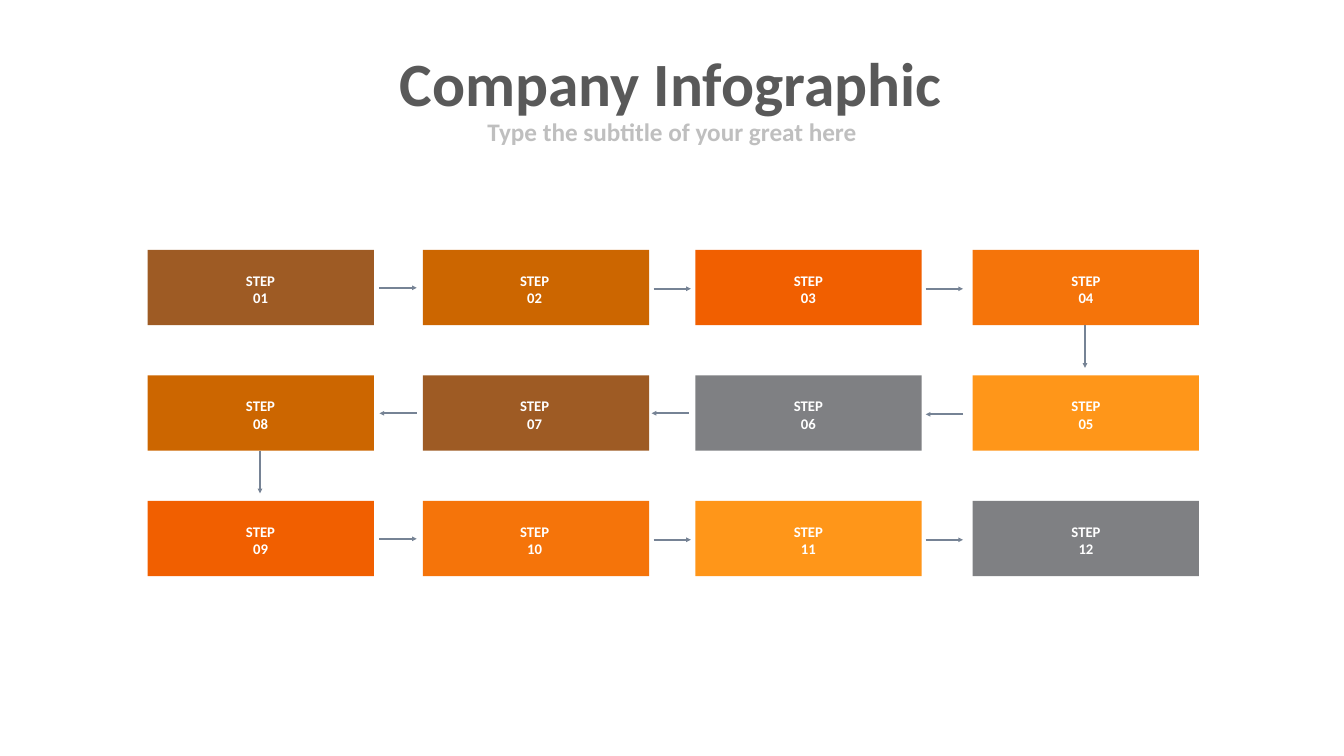
from pptx import Presentation
from pptx.dml.color import RGBColor
from pptx.enum.shapes import MSO_CONNECTOR as Link, MSO_SHAPE as Shape
from pptx.enum.text import MSO_ANCHOR as Anchor, MSO_AUTO_SIZE as Fit, PP_ALIGN as Align
from pptx.oxml.ns import qn
from pptx.util import Pt
from lxml.etree import SubElement

PX = 9144  # EMU per px, 100 px to the inch

BROWN = RGBColor(0x9E, 0x5B, 0x24)
OCHRE = RGBColor(0xCC, 0x66, 0x00)
RED_ORANGE = RGBColor(0xF1, 0x5F, 0x00)
ORANGE = RGBColor(0xF5, 0x74, 0x0A)
AMBER = RGBColor(0xFF, 0x96, 0x19)
GREY = RGBColor(0x7F, 0x80, 0x83)
SLATE = RGBColor(0x76, 0x83, 0x95)
DARK = RGBColor(0x59, 0x59, 0x59)
PALE = RGBColor(0xBF, 0xBF, 0xBF)
WHITE = RGBColor(0xFF, 0xFF, 0xFF)

STEP_COLORS = [BROWN, OCHRE, RED_ORANGE, ORANGE, AMBER, GREY]
HEADING = {"alignment": Align.CENTER, "line_spacing": 0.9, "space_before": Pt(0)}
SUBHEADING = {**HEADING, "space_before": Pt(10)}
LABEL = {"alignment": Align.CENTER}

# Grid of steps
BOX_LEFTS = [293, 839, 1380, 1930]
LABEL_LEFTS = [461, 1005, 1548, 2099]
BOX_WIDTH, BOX_HEIGHT = 449, 149
FIRST_TOP, ROW_PITCH, ROWS = 496, 249, 3
GAP_ARROWS = [(753, 75), (1297, 77), (1837, 77)]  # left end, drop below row top
BACK_ARROWS = [(753, 75), (1293, 75), (1837, 77)]
ARROW_WIDTH, ARROW_DROP = 74, 85
TURNS = [2153, 516]  # x of the down arrows after rows one and two


class Canvas:
    """Holds the text style and the slide being drawn."""

    font_name = "Calibri"

    def __init__(self, slide):
        self.slide = slide

    def put_text(self, frame, text, size, color, para_format):
        para = frame.paragraphs[0]
        para.text = text
        for name, value in para_format.items():
            setattr(para, name, value)
        font_format = {"name": self.font_name, "size": Pt(size), "bold": True}
        for span in para.runs:
            for name, value in font_format.items():
                setattr(span.font, name, value)
            span.font.color.rgb = color

    def heading(self, index, text, place, size, color, para_format):
        holder = self.slide.placeholders[index]
        for name, value in zip(("left", "top", "width", "height"), place):
            setattr(holder, name, value * PX)
        frame = holder.text_frame
        settings = {"word_wrap": True, "auto_size": Fit.NONE, "vertical_anchor": Anchor.TOP}
        for name, value in settings.items():
            setattr(frame, name, value)
        self.put_text(frame, text, size, color, para_format)

    def block(self, left, top, width, height, color):
        box = self.slide.shapes.add_shape(
            Shape.RECTANGLE, left * PX, top * PX, width * PX, height * PX)
        box.shadow.inherit = False
        box.fill.solid()
        box.fill.fore_color.rgb = color
        box.line.fill.background()

    def label(self, left, top, width, height, text):
        box = self.slide.shapes.add_textbox(left * PX, top * PX, width * PX, height * PX)
        box.text_frame.word_wrap = False
        box.text_frame.auto_size = Fit.SHAPE_TO_FIT_TEXT
        self.put_text(box.text_frame, text, 21, WHITE, LABEL)

    def arrow(self, x1, y1, x2, y2):
        arrow = self.slide.shapes.add_connector(
            Link.STRAIGHT, x1 * PX, y1 * PX, x2 * PX, y2 * PX)
        arrow.line.color.rgb = SLATE
        arrow.line.width = Pt(2.25)
        properties = arrow._element.spPr
        SubElement(properties.find(qn("a:ln")), qn("a:tailEnd"), type="triangle")
        SubElement(properties, qn("a:effectLst"))


def main():
    deck = Presentation()
    deck.slide_width, deck.slide_height = 2667 * PX, 1500 * PX
    canvas = Canvas(deck.slides.add_slide(deck.slide_layouts[0]))

    # Title and subtitle
    canvas.heading(0, "Company Infographic", (113, 101, 2437, 144), 87.9, DARK, HEADING)
    canvas.heading(1, "Type the subtitle of your great here", (115, 233, 2437, 107),
                   36, PALE, SUBHEADING)

    columns = len(BOX_LEFTS)
    for row in range(ROWS):
        top = FIRST_TOP + row * ROW_PITCH
        backward = row % 2 == 1

        # Steps, running right to left in the middle row
        for place in range(columns):
            column = columns - 1 - place if backward else place
            step = row * columns + place
            color = STEP_COLORS[step % len(STEP_COLORS)]
            canvas.block(BOX_LEFTS[column], top, BOX_WIDTH, BOX_HEIGHT, color)
            canvas.label(LABEL_LEFTS[column], top + 38, 112, 45, f"STEP\v{step + 1:02}")

        # Arrows between the steps of the row
        for left, drop in BACK_ARROWS if backward else GAP_ARROWS:
            ends = [left, left + ARROW_WIDTH]
            start, end = reversed(ends) if backward else ends
            canvas.arrow(start, top + drop, end, top + drop)

    # Arrows down to the next row
    for row, x in enumerate(TURNS):
        bottom = FIRST_TOP + row * ROW_PITCH + BOX_HEIGHT
        canvas.arrow(x, bottom, x, bottom + ARROW_DROP)

    deck.save("out.pptx")


if __name__ == "__main__":
    main()
